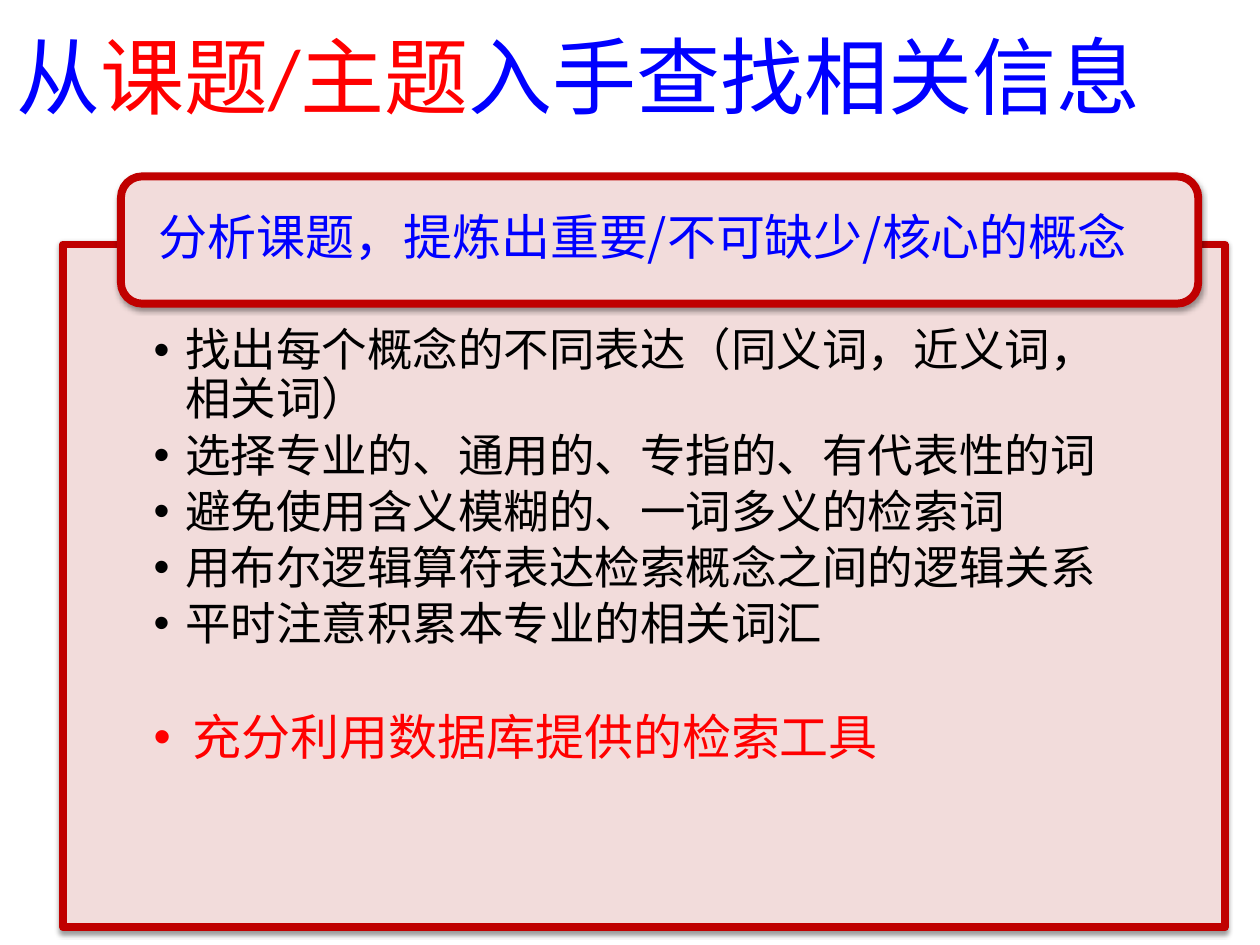
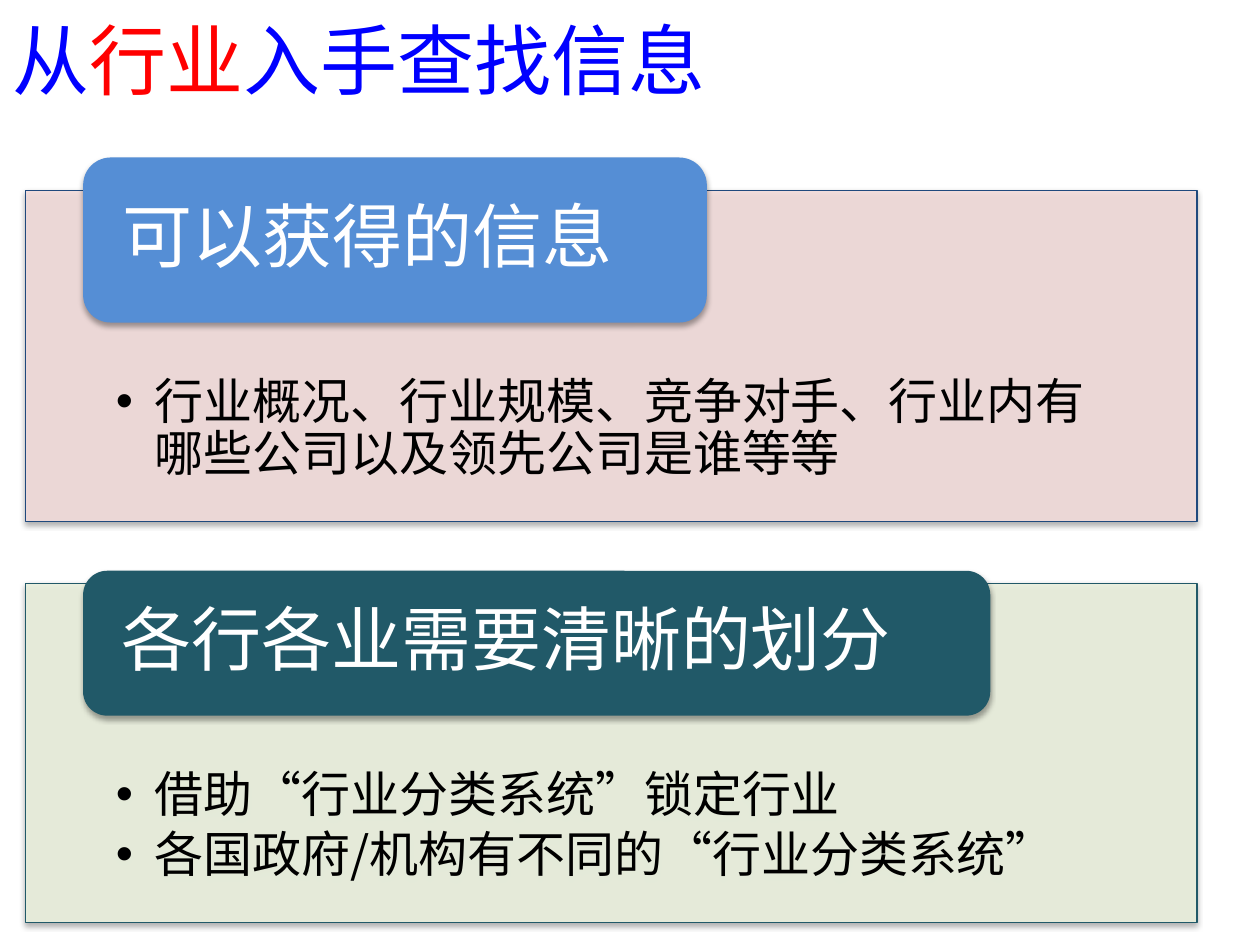
from lxml.etree import SubElement
from pptx import Presentation
from pptx.dml.color import RGBColor
from pptx.enum.shapes import MSO_SHAPE as Shape
from pptx.enum.text import MSO_ANCHOR as Anchor, PP_ALIGN as Align
from pptx.oxml import parse_xml
from pptx.oxml.ns import nsdecls, qn
from pptx.util import Inches, Pt

BLUE = RGBColor(0x00, 0x00, 0xFF)
RED = RGBColor(0xFF, 0x00, 0x00)
DARK_RED = RGBColor(0xC0, 0x00, 0x00)
BLACK = RGBColor(0x00, 0x00, 0x00)
WHITE = RGBColor(0xFF, 0xFF, 0xFF)
PINK = RGBColor(0xF2, 0xDC, 0xDB)
PALE_GREEN = RGBColor(0xEB, 0xF1, 0xDE)
NAVY = RGBColor(0x1F, 0x49, 0x7D)
SKY = RGBColor(0x55, 0x8E, 0xD5)
TEAL = RGBColor(0x21, 0x59, 0x68)
LATIN, CHINESE = "Calibri", "Noto Sans CJK SC"


def add_panel(slide, kind, box, fill, line, margins, opacity, shadow):
    shape = slide.shapes.add_shape(kind, *map(Inches, box))
    shape.fill.solid()
    shape.fill.fore_color.rgb = fill
    if opacity < 100:
        color = shape.fill._xPr.find(qn("a:solidFill"))[0]
        SubElement(color, qn("a:alpha"), val=str(opacity * 1000))
    if line:
        shape.line.color.rgb, shape.line.width = line[0], Pt(line[1])
    else:
        shape.line.fill.background()
    shadow_opacity, distance = shadow
    shape._element.spPr.append(parse_xml(
        f'<a:effectLst {nsdecls("a")}><a:outerShdw blurRad="{Pt(3.1)}" dist="{Pt(distance)}" '
        f'dir="5400000" rotWithShape="0"><a:srgbClr val="000000">'
        f'<a:alpha val="{shadow_opacity * 1000}"/></a:srgbClr></a:outerShdw></a:effectLst>'))
    frame = shape.text_frame
    frame.word_wrap = True
    for side, margin in zip(("left", "top", "right", "bottom"), margins):
        setattr(frame, f"margin_{side}", Inches(margin))
    return frame


def write_paragraph(paragraph, runs, size, font, indent=0, **formats):
    paragraph.alignment = Align.LEFT
    for name, value in formats.items():
        setattr(paragraph, name, value)
    if indent:
        properties = paragraph._p.get_or_add_pPr()
        properties.set("marL", str(Inches(indent)))
        properties.set("indent", str(-Inches(indent)))
        SubElement(properties, qn("a:buFont"), typeface="Arial")
        SubElement(properties, qn("a:buChar"), char="•")
    for text, color in runs:
        run = paragraph.add_run()
        run.text = text
        run.font.size, run.font.name, run.font.color.rgb = Pt(size), font, color


topic_bullets = [(text, 26, LATIN, BLACK, 0.25, 0) for text in (
    "找出每个概念的不同表达（同义词，近义词，相关词）",
    "选择专业的、通用的、专指的、有代表性的词",
    "避免使用含义模糊的、一词多义的检索词",
    "用布尔逻辑算符表达检索概念之间的逻辑关系",
    "平时注意积累本专业的相关词汇",
)] + [("充分利用数据库提供的检索工具", 28, CHINESE, RED, 0.31, 32)]
information_bullets, division_bullets = (
    [(text, 28, CHINESE, BLACK, 0.31, 0) for text in texts] for texts in (
        ["行业概况、行业规模、竞争对手、行业内有哪些公司以及领先公司是谁等等"],
        ["借助“行业分类系统”锁定行业", "各国政府/机构有不同的“行业分类系统”"],
    ))

topic_style = {"margins": (0.72, 0.66, 0.72, 0.2), "opacity": 100, "shadow": (38, 1.6)}
industry_style = {"margins": (0.72, 1.48, 0.72, 0.22), "opacity": 90, "shadow": (35, 1.8)}
red_line = (DARK_RED, 4.5)

slides = [
    {"title": [("从", BLUE), ("课题/主题", RED), ("入手查找相关信息", BLUE)],
     "title_box": (0.03, 0.13, 9.61, 0.93), "title_size": 48, "style": topic_style,
     "sections": [
         {"box": (0.5, 1.94, 9.22, 5.42), "fill": PINK, "line": red_line,
          "bullets": topic_bullets,
          "heading": "分析课题，提炼出重要/不可缺少/核心的概念", "heading_size": 28,
          "heading_box": (0.96, 1.4, 8.55, 1.01), "heading_fill": PINK,
          "heading_line": red_line, "heading_color": BLUE}]},
    {"title": [("从", BLUE), ("行业", RED), ("入手查找信息", BLUE)],
     "title_box": (0, 0, 9, 0.93), "title_size": 44, "style": industry_style,
     "sections": [
         {"box": (0.2, 1.51, 9.3, 2.63), "fill": PINK, "line": (NAVY, 0.75),
          "bullets": information_bullets,
          "heading": "可以获得的信息", "heading_size": 40,
          "heading_box": (0.66, 1.25, 4.95, 1.31), "heading_fill": SKY,
          "heading_line": None, "heading_color": WHITE},
         {"box": (0.2, 4.63, 9.3, 2.69), "fill": PALE_GREEN, "line": (TEAL, 0.75),
          "bullets": division_bullets,
          "heading": "各行各业需要清晰的划分", "heading_size": 40,
          "heading_box": (0.66, 4.53, 7.2, 1.15), "heading_fill": TEAL,
          "heading_line": None, "heading_color": WHITE}]},
]

presentation = Presentation()
presentation.slide_width, presentation.slide_height = Inches(10), Inches(7.5)

for content in slides:
    slide = presentation.slides.add_slide(presentation.slide_layouts[6])
    title = slide.shapes.add_textbox(*map(Inches, content["title_box"])).text_frame
    title.word_wrap, title.vertical_anchor = True, Anchor.MIDDLE
    write_paragraph(title.paragraphs[0], content["title"], content["title_size"], LATIN)

    style = content["style"]
    for section in content["sections"]:
        body = add_panel(slide, Shape.RECTANGLE, section["box"], section["fill"],
                         section["line"], **style)
        body.vertical_anchor = Anchor.TOP
        for index, (text, size, font, color, indent, gap) in enumerate(section["bullets"]):
            paragraph = body.add_paragraph() if index else body.paragraphs[0]
            write_paragraph(paragraph, [(text, color)], size, font, indent,
                            line_spacing=0.9, space_before=Pt(gap), space_after=Pt(4))

        heading = add_panel(slide, Shape.ROUNDED_RECTANGLE, section["heading_box"],
                            section["heading_fill"], section["heading_line"],
                            (0.25, 0, 0.25, 0), 100, style["shadow"])
        heading.vertical_anchor = Anchor.MIDDLE
        write_paragraph(heading.paragraphs[0], [(section["heading"], section["heading_color"])],
                        section["heading_size"], CHINESE, line_spacing=0.9)

presentation.save("out.pptx")
